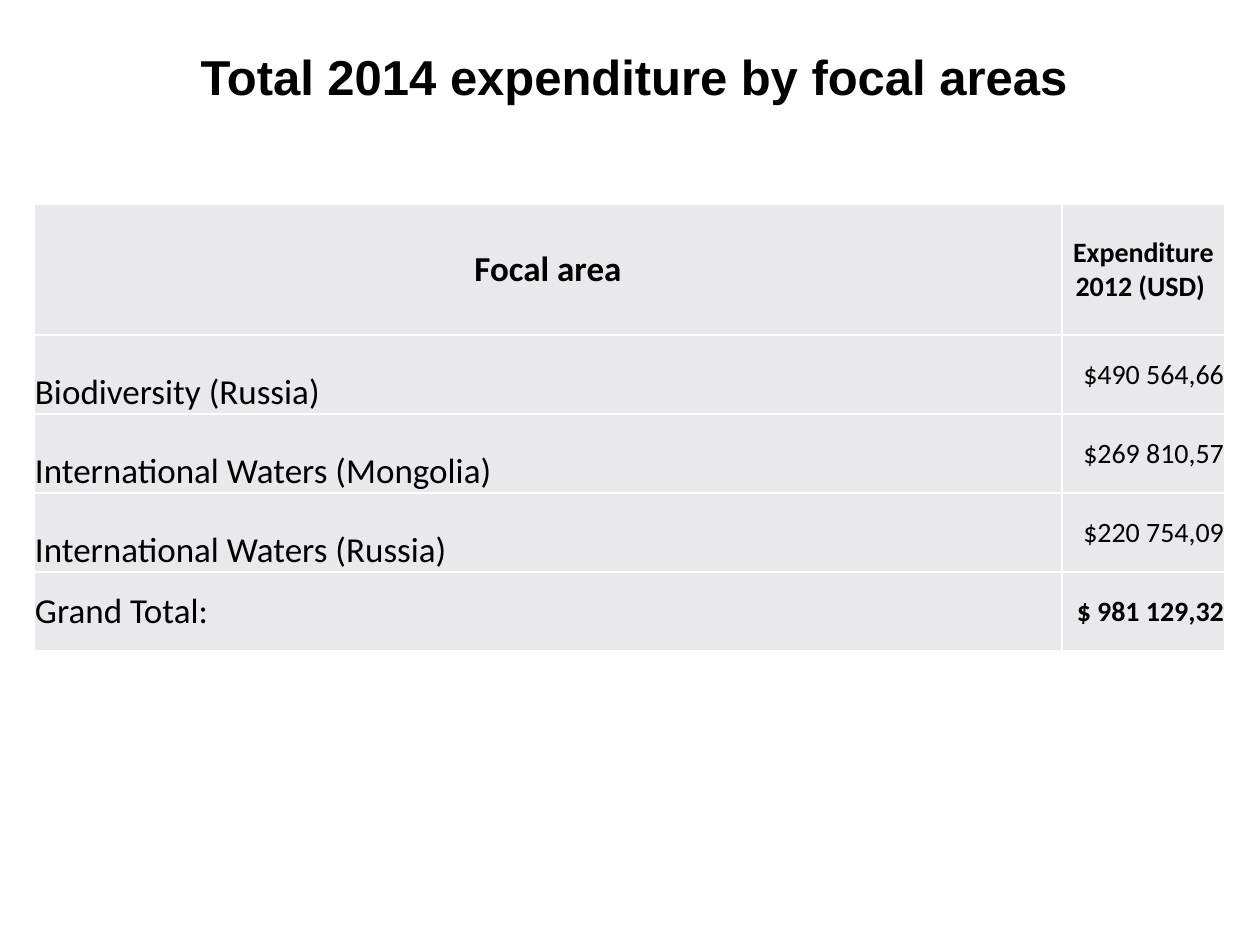
import pptx
import pptx.dml.color
import pptx.enum.text
import pptx.oxml
import pptx.oxml.ns
import pptx.util

TITLE = "Total 2014 expenditure by focal areas"
HEADER = ("Focal area", "Expenditure 2012 (USD) ")
EXPENDITURE = [
    ("Biodiversity (Russia)", "$490 564,66"),
    ("International Waters (Mongolia)", "$269 810,57"),
    ("International Waters (Russia)", "$220 754,09"),
]
TOTAL = ("Grand Total:", "$ 981 129,32")

COLORS = {"text": "000000", "cell": "E9E9ED", "border": "FFFFFF"}
PX_PER_INCH = 126
COLUMN_WIDTHS = (1028, 163)
COLUMN_SIZES = (20, 16)
HEADER_HEIGHT, ROW_HEIGHT = 131, 79

ALIGN = pptx.enum.text.PP_ALIGN
ANCHOR = pptx.enum.text.MSO_ANCHOR


def px(length):
    return pptx.util.Emu(round(length * pptx.util.Inches(1) / PX_PER_INCH))


def color(name):
    return pptx.dml.color.RGBColor.from_string(COLORS[name])


def write(frame, text, size, font="Calibri", bold=False, align=ALIGN.LEFT):
    frame.word_wrap = True
    para = frame.paragraphs[0]
    para.alignment = align
    span = para.add_run()
    span.text = text
    span.font.name = font
    span.font.size = pptx.util.Pt(size)
    span.font.bold = bold
    span.font.color.rgb = color("text")


def style_cell(cell, anchor):
    """Set anchor, margins, white 1 pt borders and fill."""
    cell.vertical_anchor = anchor
    cell.margin_left = cell.margin_right = cell.margin_top = px(1)
    cell.margin_bottom = 0
    properties = cell._tc.get_or_add_tcPr()
    for side in ("lnL", "lnR", "lnT", "lnB"):
        properties.append(pptx.oxml.parse_xml(
            f'<a:{side} {pptx.oxml.ns.nsdecls("a")} w="{pptx.util.Pt(1)}"><a:solidFill>'
            f'<a:srgbClr val="{COLORS["border"]}"/></a:solidFill></a:{side}>'))
    cell.fill.solid()
    cell.fill.fore_color.rgb = color("cell")


def add_title(page):
    box = page.shapes.add_textbox(px(152), px(35), px(964), px(81))
    box.text_frame.vertical_anchor = ANCHOR.MIDDLE
    write(box.text_frame, TITLE, 28, font="Arial", bold=True, align=ALIGN.CENTER)


def add_expenditure_table(page):
    rows = [HEADER, *EXPENDITURE, TOTAL]
    heights = [HEADER_HEIGHT] + [ROW_HEIGHT] * (len(rows) - 1)
    table = page.shapes.add_table(
        len(rows), len(HEADER), px(34), px(204),
        px(sum(COLUMN_WIDTHS)), px(sum(heights))).table
    for column, width in zip(table.columns, COLUMN_WIDTHS):
        column.width = px(width)
    for r, (row, height) in enumerate(zip(rows, heights)):
        table.rows[r].height = px(height)
        for c, text in enumerate(row):
            is_header, is_amount = row is HEADER, c == 1
            is_area = row in EXPENDITURE and not is_amount
            cell = table.cell(r, c)
            style_cell(cell, ANCHOR.BOTTOM if is_area else ANCHOR.MIDDLE)
            align = ALIGN.CENTER if is_header else ALIGN.RIGHT if is_amount else ALIGN.LEFT
            write(cell.text_frame, text, COLUMN_SIZES[c], align=align,
                  bold=is_header or (row is TOTAL and is_amount))


def main():
    deck = pptx.Presentation()
    deck.slide_width, deck.slide_height = px(1260), px(945)
    page = deck.slides.add_slide(deck.slide_layouts[6])
    add_title(page)
    add_expenditure_table(page)
    deck.save("out.pptx")


if __name__ == "__main__":
    main()
